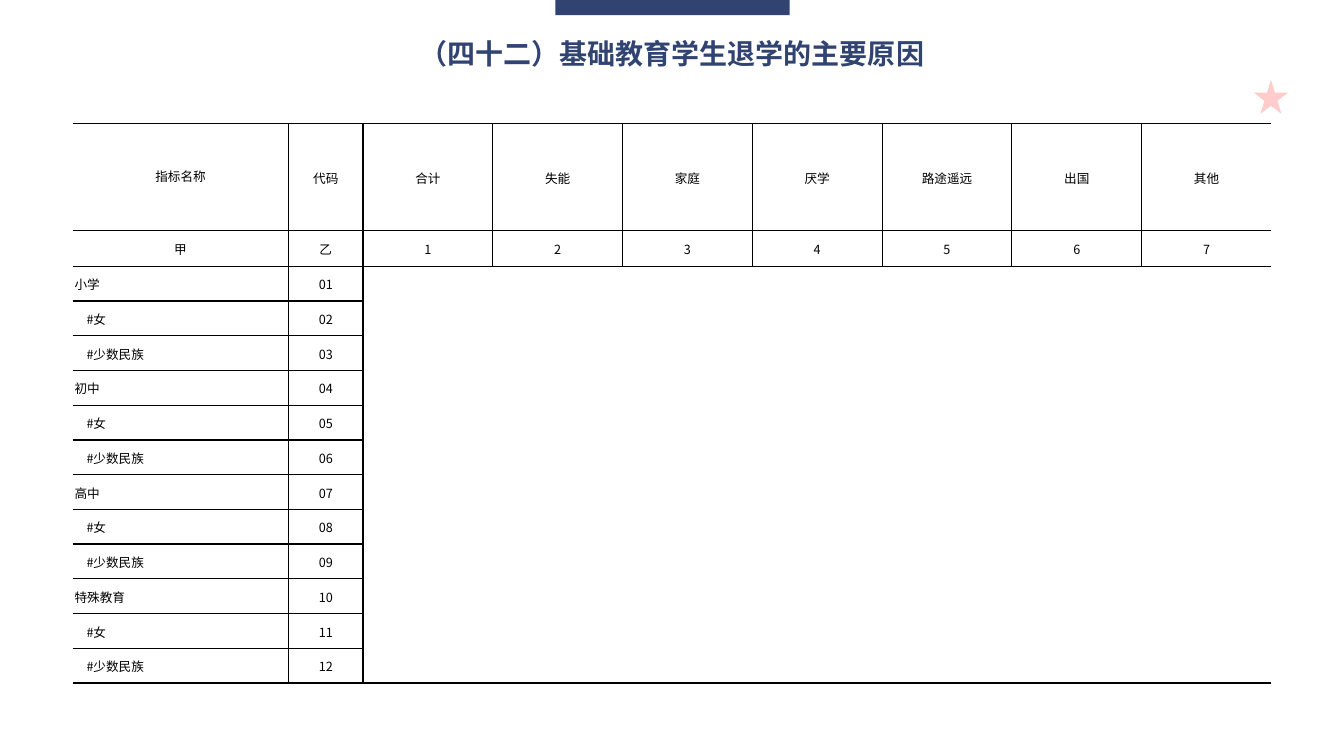
from lxml.etree import SubElement
from pptx import Presentation
from pptx.dml.color import RGBColor
from pptx.enum.shapes import MSO_SHAPE as Shape
from pptx.enum.text import MSO_ANCHOR as Anchor, MSO_AUTO_SIZE as Auto, PP_ALIGN as Align
from pptx.oxml.ns import qn
from pptx.util import Cm, Pt

# Content
TITLE = "（四十二）基础教育学生退学的主要原因"
HEADS = ["指标名称", "代码", "合计", "失能", "家庭", "厌学", "路途遥远", "出国", "其他"]
MARKS = ["甲", "乙", "1", "2", "3", "4", "5", "6", "7"]
STAGES = ["小学", "初中", "高中", "特殊教育"]
GROUPS = ["女", "少数民族"]

# Look
NAVY = RGBColor(0x30, 0x43, 0x71)
RED = RGBColor(0xFF, 0x00, 0x00)
BLACK = RGBColor(0x00, 0x00, 0x00)
SERIF, SANS, BOLD = "Times New Roman", "Noto Sans CJK SC", "Arial"

# Rows: each cell is a list of runs, each stage is followed by its groups
rows = [[[text] for text in line] for line in (HEADS, MARKS)]
names = [runs for stage in STAGES for runs in [[stage]] + [["#", group] for group in GROUPS]]
rows += [[runs, [f"{num:02}"]] for num, runs in enumerate(names, 1)]
widths = [Cm(5.44), Cm(1.88)] + [Cm(3.27)] * 7
heights = [Cm(2.69), Cm(0.9)] + [Cm(10.51) // len(names)] * len(names)


def style(run, size, color, face):
    font = run.font
    font.size, font.color.rgb, font.name = Pt(size), color, face
    SubElement(font._element, qn("a:ea"), typeface=SANS)


def deco(kind, box, color, alpha=100):
    shape = slide.shapes.add_shape(kind, *map(Cm, box))
    shape.shadow.inherit = False
    shape.fill.solid()
    shape.fill.fore_color.rgb = color
    shape.line.fill.background()
    if alpha < 100:
        clr = shape.fill._xPr.find(".//" + qn("a:srgbClr"))
        SubElement(clr, qn("a:alpha"), val=str(alpha * 1000))


def used(r, c):
    return 0 <= r < len(rows) and 0 <= c < len(rows[r])


def border(cell, r, c):
    here = used(r, c)
    sides = {
        "L": c > 0 and (here or used(r, c - 1)),
        "R": c < len(HEADS) - 1 and (here or used(r, c + 1)),
        "T": here or used(r - 1, c),
        "B": here or r == len(rows) - 1,
    }
    props = cell._tc.get_or_add_tcPr()
    for side, shown in sides.items():
        line = SubElement(props, qn("a:ln" + side), w=str(Pt(1)))
        if shown:
            fill = SubElement(line, qn("a:solidFill"))
            SubElement(fill, qn("a:srgbClr"), val=str(BLACK))
        else:
            SubElement(line, qn("a:noFill"))


def write(cell, runs, r, c):
    cell.vertical_anchor = Anchor.MIDDLE
    cell.margin_left = cell.margin_right = Cm(0.05)
    cell.margin_top = cell.margin_bottom = 0
    para = cell.text_frame.paragraphs[0]
    para.alignment = Align.JUSTIFY if r > 1 and c == 0 else Align.CENTER
    para.line_spacing = Pt(12 if r == c == 0 else 14)
    if len(runs) > 1:
        props = para._p.get_or_add_pPr()
        props.set("marL", "0")
        props.set("indent", str(Cm(0.3)))
    for text in runs:
        run = para.add_run()
        run.text = text
        style(run, 9, BLACK, SANS if text.isascii() else SERIF)


prs = Presentation()
prs.slide_width, prs.slide_height = Cm(33.87), Cm(19.05)
slide = prs.slides.add_slide(prs.slide_layouts[5])

# Ornaments
deco(Shape.STAR_5_POINT, (31.6, 2.01, 0.86, 0.86), RED, 20)
deco(Shape.RECTANGLE, (14, -0.03, 5.9, 0.41), NAVY)

# Title
title = slide.shapes.title
title.left, title.top, title.width, title.height = map(Cm, (10.26, 0.79, 13.34, 1.12))
frame = title.text_frame
frame.text = TITLE
frame.word_wrap = False
frame.auto_size = Auto.SHAPE_TO_FIT_TEXT
frame.vertical_anchor = Anchor.TOP
para = frame.paragraphs[0]
para.alignment = Align.CENTER
style(para.runs[0], 20, NAVY, BOLD)
para.runs[0].font.bold = True

# Table
table = slide.shapes.add_table(len(rows), len(HEADS), Cm(1.83), Cm(3.12),
                               sum(widths), sum(heights)).table
table.first_row = table.horz_banding = False
for col, width in zip(table.columns, widths):
    col.width = width
for row, height in zip(table.rows, heights):
    row.height = height
for r, line in enumerate(rows):
    for c in range(len(HEADS)):
        cell = table.cell(r, c)
        border(cell, r, c)
        cell.fill.background()
        if used(r, c):
            write(cell, line[c], r, c)
        else:
            cell.margin_top = cell.margin_bottom = 0
            cell.text_frame.paragraphs[0].font.size = Pt(9)

prs.save("out.pptx")
